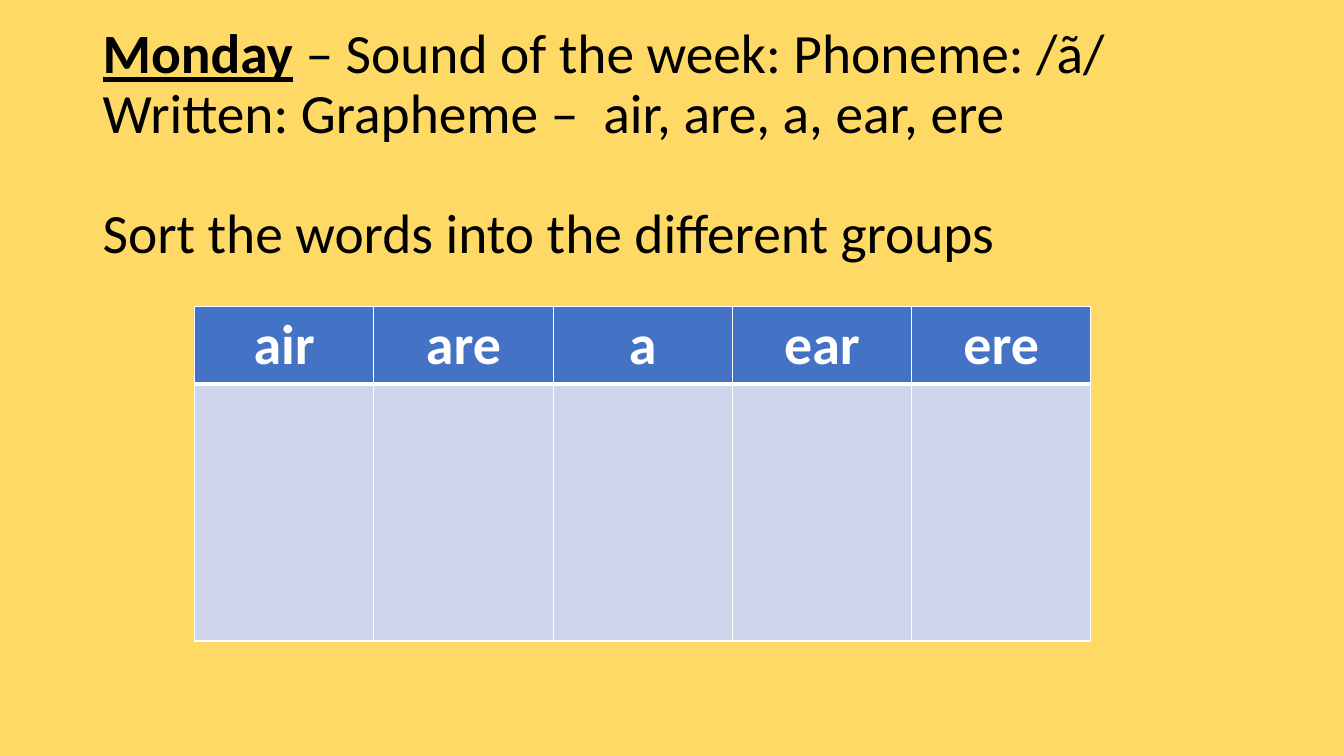
from lxml import etree
from pptx import Presentation
from pptx import util as u
from pptx.dml.color import RGBColor
from pptx.enum import text
from pptx.oxml import ns

COLORS = {
    "background": "FFD966",
    "ink": "000000",
    "header": "4472C4",
    "body": "CFD5EA",
    "white": "FFFFFF",
}
GRAPHEMES = ["air", "are", "a", "ear", "ere"]
HEADER_HEIGHT = 0.77


def rgb(name):
    return RGBColor.from_string(COLORS[name])


def add_run(p, words, color, **formats):
    r = p.add_run()
    r.text = words
    r.font.color.rgb = rgb(color)
    for name, value in {"name": "Calibri", **formats}.items():
        setattr(r.font, name, value)


def set_borders(cell, widths):
    """Draw white cell edges; widths maps L, R, T, B to points."""
    tcPr = cell._tc.get_or_add_tcPr()
    for i, (side, width) in enumerate(widths.items()):
        ln = etree.Element(ns.qn(f"a:ln{side}"), w=str(u.Pt(width)))
        fill = etree.SubElement(ln, ns.qn("a:solidFill"))
        etree.SubElement(fill, ns.qn("a:srgbClr"), val=COLORS["white"])
        tcPr.insert(i, ln)


def add_heading(s, left, top, width, height):
    box = s.shapes.add_textbox(*map(u.Inches, (left, top, width, height)))
    tf = box.text_frame
    tf.word_wrap = True
    tf.vertical_anchor = text.MSO_ANCHOR.MIDDLE
    size = u.Pt(39.6)

    p = tf.paragraphs[0]
    add_run(p, "Monday", "ink", size=size, bold=True, underline=True)
    add_run(p, " – Sound of the week: Phoneme: /ã/", "ink", size=size)
    p.add_line_break()
    add_run(p, "Written: Grapheme –  air, are, a, ear, ere", "ink", size=size)

    task = tf.add_paragraph()
    task.space_before = u.Pt(43)
    add_run(task, "Sort the words into the different groups", "ink", size=size)
    for p in tf.paragraphs:
        p.line_spacing = 0.9


def add_sorting_table(s, left, top, width, height):
    frame = s.shapes.add_table(
        2, len(GRAPHEMES), *map(u.Inches, (left, top, width, height)))
    table = frame.table
    table.first_row = table.horz_banding = False
    for column in table.columns:
        column.width = u.Inches(width / len(GRAPHEMES))
    table.rows[0].height = u.Inches(HEADER_HEIGHT)
    table.rows[1].height = u.Inches(height - HEADER_HEIGHT)

    for i, grapheme in enumerate(GRAPHEMES):
        header, body = table.cell(0, i), table.cell(1, i)
        for cell, color in ((header, "header"), (body, "body")):
            cell.fill.solid()
            cell.fill.fore_color.rgb = rgb(color)
        set_borders(header, {"L": 1, "R": 1, "T": 1, "B": 3})
        set_borders(body, {"L": 1, "R": 1, "T": 3, "B": 1})
        p = header.text_frame.paragraphs[0]
        p.alignment = text.PP_ALIGN.CENTER
        add_run(p, grapheme, "white", size=u.Pt(40), bold=True)


def main():
    prs = Presentation()
    prs.slide_width, prs.slide_height = u.Inches(13.33), u.Inches(7.5)
    s = prs.slides.add_slide(prs.slide_layouts[6])
    s.background.fill.solid()
    s.background.fill.fore_color.rgb = rgb("background")
    add_heading(s, 0.92, 0.72, 11.5, 1.45)
    add_sorting_table(s, 1.93, 3.04, 8.89, 3.32)
    prs.save("out.pptx")


if __name__ == "__main__":
    main()
